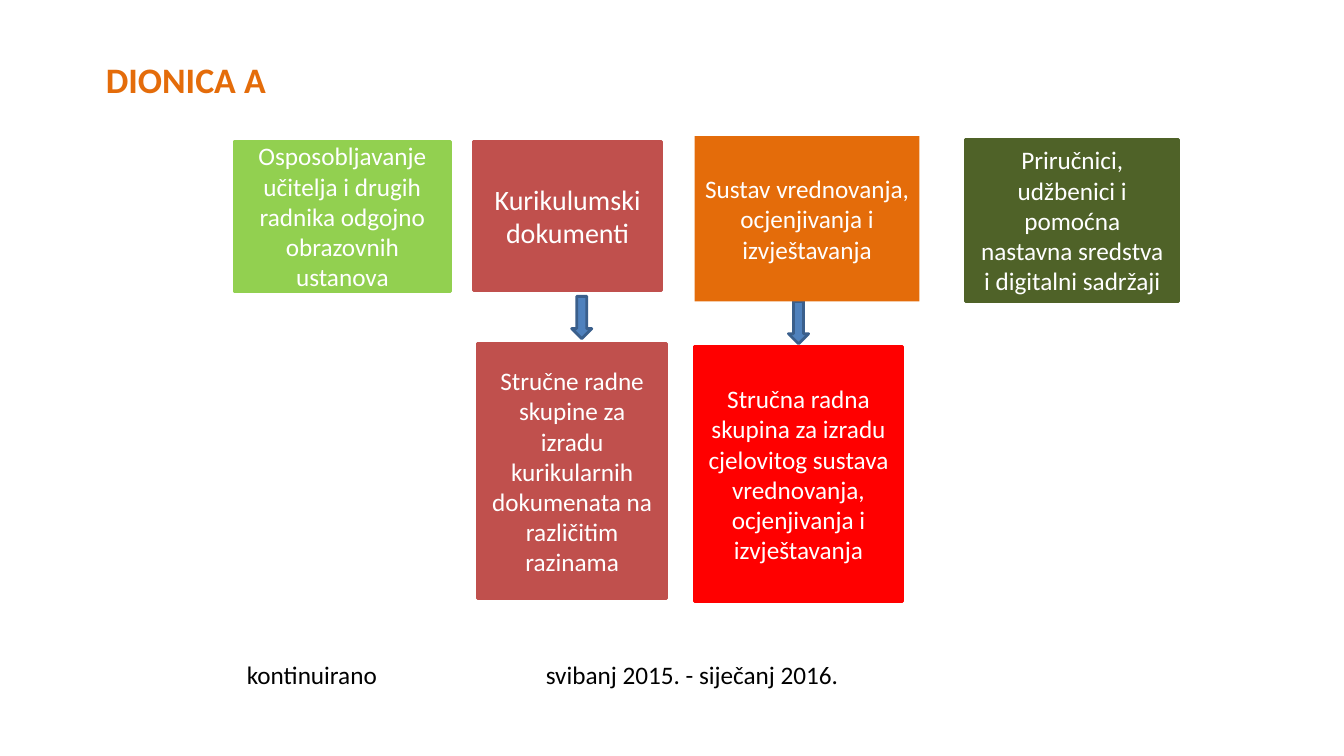
from pptx import Presentation
from pptx.dml.color import RGBColor
from pptx.enum.shapes import MSO_SHAPE
from pptx.enum.text import MSO_ANCHOR, MSO_AUTO_SIZE, PP_ALIGN
from pptx.util import Inches, Pt

RECTANGLE, DOWN_ARROW = MSO_SHAPE.RECTANGLE, MSO_SHAPE.DOWN_ARROW
MIDDLE = MSO_ANCHOR.MIDDLE
NO_AUTOFIT, FIT_SHAPE = MSO_AUTO_SIZE.NONE, MSO_AUTO_SIZE.SHAPE_TO_FIT_TEXT
LEFT, CENTER = PP_ALIGN.LEFT, PP_ALIGN.CENTER
TITLE_ONLY = 5
WHITE, BLACK = "FFFFFF", "000000"
RED, BRICK, LIME = "FF0000", "C0504D", "92D050"
OLIVE, ORANGE, BLUE, NAVY = "4F6228", "E46C0A", "4F81BD", "3A5F8C"


def write(frame, text, size, color, align):
    frame.word_wrap = True
    paragraph = frame.paragraphs[0]
    paragraph.alignment = align
    run = paragraph.add_run()
    run.text = text
    run.font.name = "Calibri"
    run.font.size = Pt(size)
    run.font.color.rgb = RGBColor.from_string(color)
    return run


def add_block(kind, place, fill, outline):
    block = slide.shapes.add_shape(kind, *map(Inches, place))
    block.shadow.inherit = False
    block.fill.solid()
    block.fill.fore_color.rgb = RGBColor.from_string(fill)
    if outline:
        block.line.color.rgb = RGBColor.from_string(outline)
        block.line.width = Pt(2)
    else:
        block.line.fill.background()
    return block


prs = Presentation()
prs.slide_width, prs.slide_height = Inches(13.33), Inches(7.5)
slide = prs.slides.add_slide(prs.slide_layouts[TITLE_ONLY])

title = slide.shapes.title
title.left, title.top = Inches(0.95), Inches(0.4)
title.width, title.height = Inches(11.33), Inches(0.7)
title.text_frame.auto_size = NO_AUTOFIT
title.text_frame.vertical_anchor = MIDDLE
heading = write(title.text_frame, "dionica a", 32, ORANGE, LEFT)
heading.font.bold = True
heading._r.get_or_add_rPr().set("cap", "small")

for left, top in [(5.67, 2.94), (7.82, 2.99)]:
    add_block(DOWN_ARROW, (left, top, 0.2, 0.42), BLUE, NAVY)

activities = [
    ("Osposobljavanje učitelja i drugih radnika odgojno obrazovnih ustanova",
     (2.32, 1.4, 2.15, 1.49), 18, LIME, LIME),
    ("Kurikulumski dokumenti", (4.7, 1.4, 1.86, 1.48), 20, BRICK, BRICK),
    ("Sustav vrednovanja, ocjenjivanja i izvještavanja",
     (6.89, 1.35, 2.23, 1.64), 18, ORANGE, None),
    ("Priručnici, udžbenici i pomoćna nastavna sredstva i digitalni sadržaji",
     (9.58, 1.38, 2.11, 1.61), 18, OLIVE, OLIVE),
    ("Stručne radne skupine za izradu kurikularnih dokumenata na različitim razinama",
     (4.74, 3.41, 1.87, 2.53), 18, BRICK, BRICK),
    ("Stručna radna skupina za izradu cjelovitog sustava vrednovanja, ocjenjivanja i izvještavanja",
     (6.89, 3.44, 2.06, 2.53), 18, RED, RED),
]
for text, place, size, fill, outline in activities:
    activity = add_block(RECTANGLE, place, fill, outline)
    activity.text_frame.vertical_anchor = MIDDLE
    write(activity.text_frame, text, size, WHITE, CENTER)

for text, left, width, align in [
    ("kontinuirano", 2.35, 2.15, LEFT),
    ("svibanj 2015. - siječanj 2016.", 4.78, 4.17, CENTER),
]:
    period = slide.shapes.add_textbox(Inches(left), Inches(6.49), Inches(width), Inches(0.4))
    period.text_frame.auto_size = FIT_SHAPE
    write(period.text_frame, text, 18, BLACK, align)

prs.save("out.pptx")
